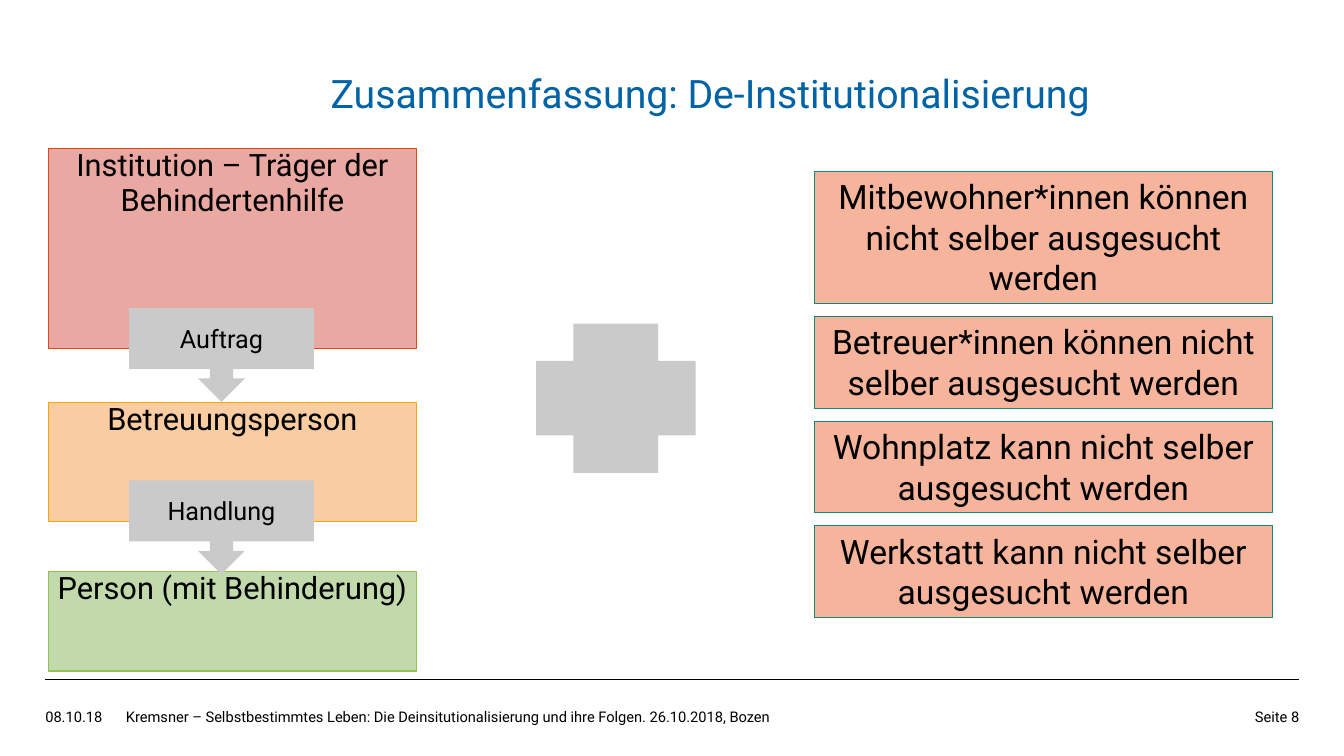
from pptx import Presentation
from pptx.dml.color import RGBColor
from pptx.enum import shapes, text
from pptx.util import Pt

FONT = "Roboto"
BLACK = RGBColor(0x00, 0x00, 0x00)
BLUE = RGBColor(0x00, 0x63, 0xA6)
GREY = RGBColor(0xCA, 0xCA, 0xCA)
RED, RED_LINE = RGBColor(0xEA, 0xA8, 0xA2), RGBColor(0xDD, 0x48, 0x14)
ORANGE, ORANGE_LINE = RGBColor(0xF9, 0xCC, 0xA2), RGBColor(0xF6, 0xA8, 0x00)
GREEN, GREEN_LINE = RGBColor(0xC2, 0xD9, 0xAB), RGBColor(0x94, 0xC1, 0x54)
SALMON, TEAL = RGBColor(0xF6, 0xB4, 0x9C), RGBColor(0x11, 0x89, 0x7A)

RECT = shapes.MSO_SHAPE.RECTANGLE
CALLOUT = shapes.MSO_SHAPE.DOWN_ARROW_CALLOUT
PLUS = shapes.MSO_SHAPE.CROSS
TOP, MIDDLE, BOTTOM = (text.MSO_ANCHOR.TOP, text.MSO_ANCHOR.MIDDLE,
                       text.MSO_ANCHOR.BOTTOM)
LEFT, CENTER, RIGHT = text.PP_ALIGN.LEFT, text.PP_ALIGN.CENTER, text.PP_ALIGN.RIGHT


def write(sp, words, size, color=BLACK, align=CENTER, anchor=TOP,
          spacing=1.0, inset=True):
    tf = sp.text_frame
    tf.word_wrap = True
    tf.auto_size = text.MSO_AUTO_SIZE.NONE
    tf.vertical_anchor = anchor
    if not inset:
        tf.margin_left = tf.margin_right = tf.margin_top = tf.margin_bottom = 0
    p = tf.paragraphs[0]
    p.alignment = align
    p.line_spacing = spacing
    p.space_before = Pt(0)
    r = p.add_run()
    r.text = words
    r.font.name = FONT
    r.font.size = Pt(size)
    r.font.color.rgb = color


def add_box(s, kind, x, y, w, h, fill, line=None):
    sp = s.shapes.add_shape(kind, Pt(x), Pt(y), Pt(w), Pt(h))
    sp.shadow.inherit = False
    sp.fill.solid()
    sp.fill.fore_color.rgb = fill
    if line is None:
        sp.line.fill.background()
    else:
        sp.line.color.rgb = line
        sp.line.width = Pt(0.75)
    return sp


def add_title(s, x, y, w, h):
    sp = s.shapes.title
    sp.left, sp.top, sp.width, sp.height = Pt(x), Pt(y), Pt(w), Pt(h)
    write(sp, "Zusammenfassung: De-Institutionalisierung", 28, BLUE, LEFT,
          BOTTOM, 0.9, False)


def add_hierarchy(s, x, y, w):
    levels = [
        ("Institution – Träger der Behindertenhilfe", 0, 143.3, RED, RED_LINE),
        ("Betreuungsperson", 181.5, 85, ORANGE, ORANGE_LINE),
        ("Person (mit Behinderung)", 302.5, 71, GREEN, GREEN_LINE),
    ]
    for words, dy, h, fill, line in levels:
        sp = add_box(s, RECT, x, y + dy, w, h, fill, line)
        write(sp, words, 22, spacing=0.95, inset=False)
    for words, dy in [("Auftrag", 114.3), ("Handlung", 237.4)]:
        sp = add_box(s, CALLOUT, x + 57.6, y + dy, 132, 67, GREY)
        write(sp, words, 18, anchor=MIDDLE)


def add_limits(s, x, y, w):
    gap = 9.3
    limits = [
        ("Mitbewohner*innen können nicht selber ausgesucht werden", 94.3),
        ("Betreuer*innen können nicht selber ausgesucht werden", 65.5),
        ("Wohnplatz kann nicht selber ausgesucht werden", 65.5),
        ("Werkstatt kann nicht selber ausgesucht werden", 65.5),
    ]
    for words, h in limits:
        write(add_box(s, RECT, x, y, w, h, SALMON, TEAL), words, 24)
        y += h + gap


def add_footer(s, x, y, w):
    rule = s.shapes.add_connector(shapes.MSO_CONNECTOR.STRAIGHT,
                                  Pt(x), Pt(y), Pt(x + w), Pt(y))
    rule.line.color.rgb = BLACK
    rule.line.width = Pt(0.75)
    sp_pr = rule._element.spPr
    sp_pr.append(sp_pr.makeelement(
        "{http://schemas.openxmlformats.org/drawingml/2006/main}effectLst", {}))
    parts = [
        ("08.10.18", 0, 57, LEFT),
        ("Kremsner – Selbstbestimmtes Leben: Die Deinsitutionalisierung "
         "und ihre Folgen. 26.10.2018, Bozen", 57.6, 614, LEFT),
        ("Seite 8", w - 65.5, 65.5, RIGHT),
    ]
    for words, dx, width, align in parts:
        sp = s.shapes.add_textbox(Pt(x + dx), Pt(y + 20.2), Pt(width), Pt(28.8))
        write(sp, words, 10.5, align=align, inset=False)


def main():
    prs = Presentation()
    prs.slide_width, prs.slide_height = Pt(960), Pt(540)
    s = prs.slides.add_slide(prs.slide_layouts[5])
    add_footer(s, 32.4, 485.3, 895.7)
    add_title(s, 236.2, 18.7, 671.8, 64.8)
    add_hierarchy(s, 34.6, 105.8, 262.8)
    add_limits(s, 581.8, 122.4, 326.9)
    add_box(s, PLUS, 383, 231.1, 113.8, 106.6, GREY)
    prs.save("out.pptx")


if __name__ == "__main__":
    main()
